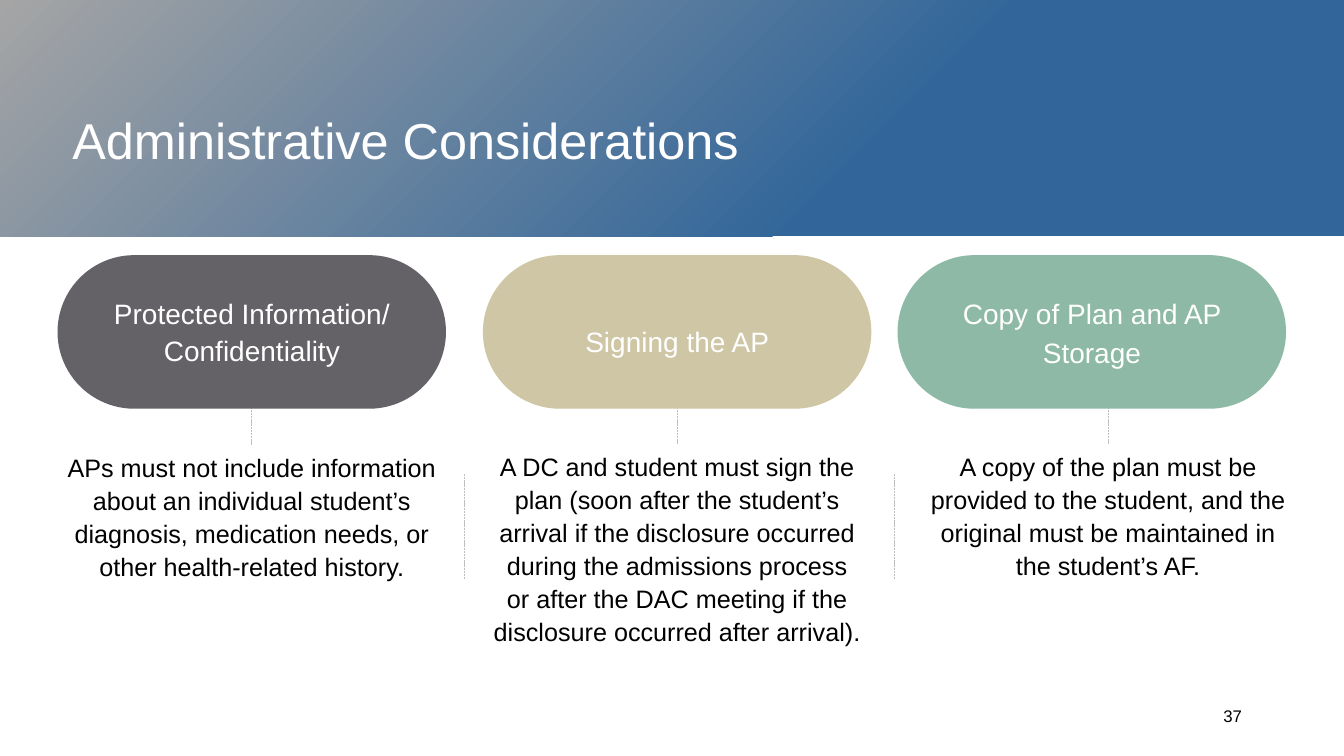
from lxml import etree
from pptx import Presentation
from pptx import util as u
from pptx.dml.color import RGBColor
from pptx.enum import dml, shapes, text
from pptx.oxml import ns

WHITE = RGBColor(0xFF, 0xFF, 0xFF)
BLACK = RGBColor(0, 0, 0)
BLUE = RGBColor(0x32, 0x66, 0x9A)
SILVER = RGBColor(0xA5, 0xA5, 0xA5)
RULE = RGBColor(0xBF, 0xBF, 0xBF)
GRAY = RGBColor(0x64, 0x62, 0x67)
SAND = RGBColor(0xCF, 0xC6, 0xA5)
GREEN = RGBColor(0x8D, 0xB9, 0xA6)

PILL_W, PILL_H, PILL_TOP = 9.79, 3.87, 6.43
LABEL_W, INSET = 8.2, 0.8

TOPICS = [
    dict(left=1.45, body_x=1.45, body_y=11.2, stem=11.2, color=GRAY,
         label="Protected Information/ Confidentiality",
         box=(7.28, 2.06), fmt=dict(gap=1.09, before=6),
         body="APs must not include information about an individual student’s "
              "diagnosis, medication needs, or other health-related history."),
    dict(left=12.17, body_x=12.17, body_y=11.18, stem=11.18, color=SAND,
         label="Signing the AP", box=(7.62, 1.37), fmt=dict(gap=1.5),
         body="A DC and student must sign the plan (soon after the student’s "
              "arrival if the disclosure occurred during the admissions process "
              "or after the DAC meeting if the disclosure occurred after arrival)."),
    dict(left=22.62, body_x=23.03, body_y=11.18, stem=11.18, color=GREEN,
         label="Copy of Plan and AP Storage",
         box=(7.24, 2.13), fmt=dict(gap=1.14, before=6),
         body="A copy of the plan must be provided to the student, and the "
              "original must be maintained in the student’s AF."),
]


def write(shape, words, size=18, color=BLACK, align="CENTER", gap=1.0, before=0):
    """Put formatted text into a shape."""
    frame = shape.text_frame
    frame.word_wrap = True
    frame.auto_size = text.MSO_AUTO_SIZE.NONE
    frame.vertical_anchor = text.MSO_ANCHOR.TOP
    para = frame.paragraphs[0]
    para.alignment = getattr(text.PP_ALIGN, align)
    para.line_spacing = gap
    para.space_before = u.Pt(before)
    run = para.add_run()
    run.text = words
    run.font.size = u.Pt(size)
    run.font.name = "Arial"
    run.font.color.rgb = color


def note(slide, x, y, w, h, words, **fmt):
    """Add a text box."""
    box = slide.shapes.add_textbox(u.Cm(x), u.Cm(y), u.Cm(w), u.Cm(h))
    write(box, words, **fmt)


def rule(slide, x, top, end):
    """Add a thin dashed vertical line."""
    line = slide.shapes.add_connector(
        shapes.MSO_CONNECTOR.STRAIGHT, u.Cm(x), u.Cm(top), u.Cm(x), u.Cm(end))
    line.line.color.rgb = RULE
    line.line.width = u.Pt(0.5)
    line.line.dash_style = dml.MSO_LINE.SQUARE_DOT
    etree.SubElement(line._element.spPr, ns.qn("a:effectLst"))


def block(slide, kind, x, y, w, h):
    """Add a preset shape with no outline or shadow."""
    shape = slide.shapes.add_shape(kind, u.Cm(x), u.Cm(y), u.Cm(w), u.Cm(h))
    shape.shadow.inherit = False
    shape.line.fill.background()
    return shape


def band(slide):
    """Add the gradient header."""
    fill = block(slide, shapes.MSO_SHAPE.RECTANGLE, 0, 0, 33.87, 5.95).fill
    fill.gradient()
    fill.gradient_angle = 135
    for stop, (place, color) in zip(fill.gradient_stops, [(0.35, BLUE), (1, SILVER)]):
        stop.position = place
        stop.color.rgb = color


def head(slide, words):
    """Place the title in front of the header."""
    title = slide.shapes.title
    title.left, title.top = u.Cm(1.57), u.Cm(2.62)
    title.width, title.height = u.Cm(32.28), u.Cm(1.8)
    write(title, words, size=36, color=WHITE, align="LEFT")
    slide.shapes._spTree.append(title._element)


def topic(slide, item):
    """Add one pill with its stem, label and description."""
    left = item["left"]
    rule(slide, item["body_x"] + PILL_W / 2, 9.25, item["stem"])
    pill = block(slide, shapes.MSO_SHAPE.ROUNDED_RECTANGLE, left, PILL_TOP, PILL_W, PILL_H)
    pill.adjustments[0] = 0.5
    pill.fill.solid()
    pill.fill.fore_color.rgb = item["color"]
    top, high = item["box"]
    note(slide, left + INSET, top, LABEL_W, high, item["label"],
         size=20, color=WHITE, **item["fmt"])
    note(slide, item["body_x"], item["body_y"], PILL_W, 3.56, item["body"],
         gap=1.09, before=6)


def main():
    """Build and save the slide."""
    deck = Presentation()
    deck.slide_width, deck.slide_height = u.Cm(33.87), u.Cm(19.05)
    slide = deck.slides.add_slide(deck.slide_layouts[5])
    band(slide)
    for item in TOPICS:
        topic(slide, item)
    for x in (11.71, 22.53):
        rule(slide, x, 11.94, 14.6)
    head(slide, "Administrative Considerations")
    note(slide, 23.93, 17.65, 7.62, 1.02, "37", size=12, align="RIGHT", before=3)
    deck.save("out.pptx")


if __name__ == "__main__":
    main()
